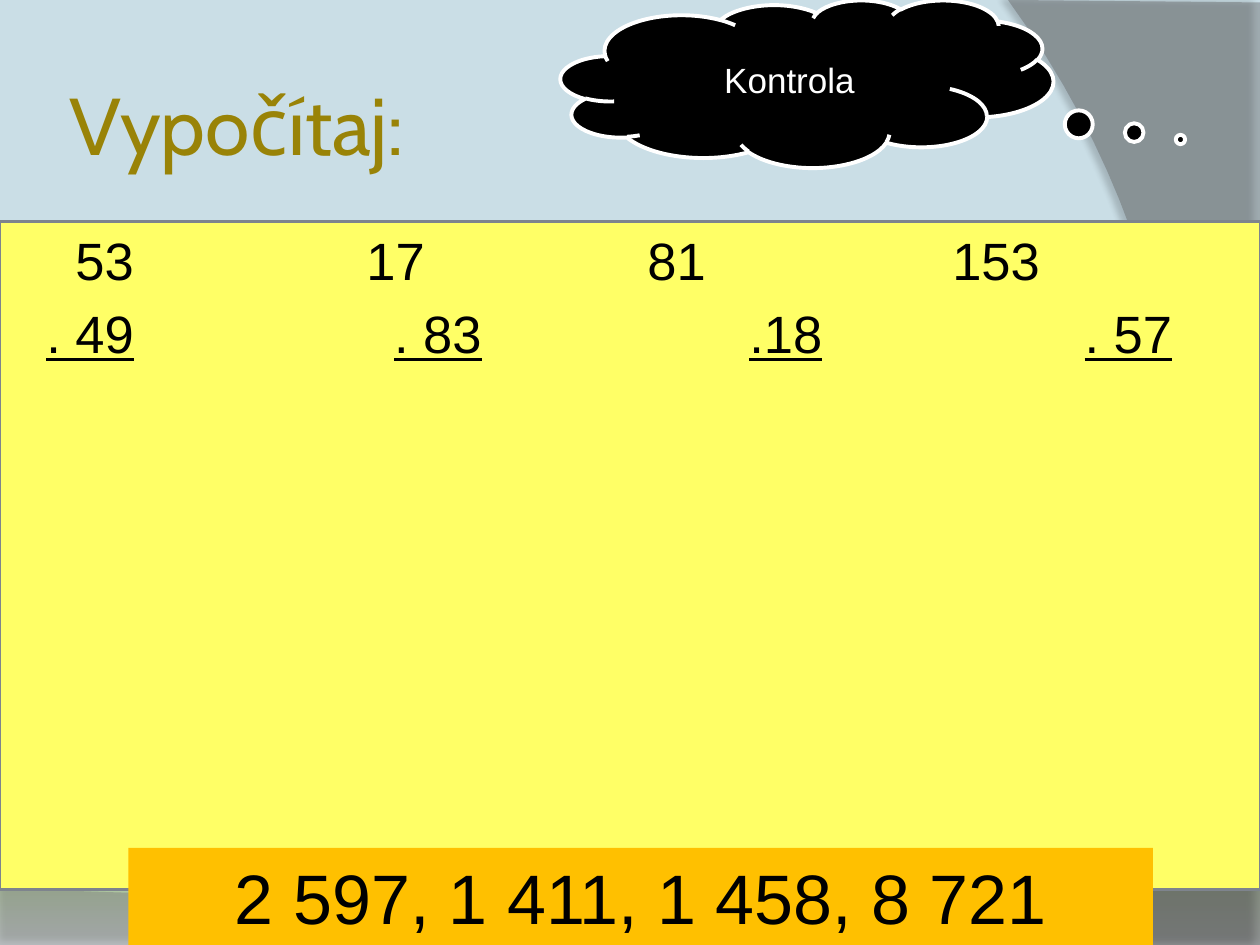
from lxml import etree
from pptx import Presentation
from pptx.dml.color import RGBColor
from pptx.enum.shapes import MSO_SHAPE as SHAPE
from pptx.enum.text import MSO_ANCHOR as ANCHOR, PP_ALIGN as ALIGN
from pptx.oxml.ns import qn
from pptx.util import Inches, Pt

TITLE = "Vypočítaj:"
HINT = "Kontrola"
RESULTS = "2 597, 1 411, 1 458, 8 721"
ROWS = [
    (False, [("53", 0.5), ("17", 2.81), ("81", 5.04), ("153", 7.46)]),
    (True, [(". 49", 0.27), (". 83", 3.03), (".18", 5.85), (". 57", 8.51)]),
]
BACKGROUND = [(50, "CADEE6"), (84, "92D050"), (84, "FFC000"), (84, "92D050"), (100, "E5EEF2")]

BLACK = RGBColor(0x00, 0x00, 0x00)
WHITE = RGBColor(0xFF, 0xFF, 0xFF)
GOLD = RGBColor(0x99, 0x83, 0x07)
YELLOW = RGBColor(0xFF, 0xFF, 0x66)
ORANGE = RGBColor(0xFF, 0xC0, 0x00)
SLATE = RGBColor(0x7E, 0x84, 0x8D)
GRAY = RGBColor(0x7F, 0x7F, 0x7F)
DARK_GRAY = RGBColor(0x5E, 0x5E, 0x5E)


def add(parent, tag, **attrs):
    return etree.SubElement(parent, qn(tag), {k: str(v) for k, v in attrs.items()})


def bezier(a, b, c, d, steps=40):
    for i in range(1, steps + 1):
        t = i / steps
        u = 1 - t
        yield tuple(u**3 * a[k] + 3 * u * u * t * b[k] + 3 * u * t * t * c[k] + t**3 * d[k]
                    for k in (0, 1))


def paint_background(s):
    fill = s.background.fill
    fill.gradient()
    fill.gradient_angle = 270
    stops = s.background._cSld.find(".//" + qn("a:gsLst"))
    for stop in list(stops):
        stops.remove(stop)
    for pos, color in BACKGROUND:
        add(add(stops, "a:gs", pos=pos * 1000), "a:srgbClr", val=color)


def add_wave(s, points, color, alpha, shadow_alpha, distance, direction):
    builder = s.shapes.build_freeform(Inches(points[0][0]), Inches(points[0][1]), scale=1.0)
    builder.add_line_segments([(Inches(x), Inches(y)) for x, y in points[1:]], close=True)
    sp = builder.convert_to_shape()
    sp.fill.solid()
    sp.fill.fore_color.rgb = color
    sp.line.fill.background()
    add(sp.fill._xPr.find(".//" + qn("a:srgbClr")), "a:alpha", val=alpha * 1000)
    sp.shadow.inherit = False
    shadow = add(sp._element.spPr.find(qn("a:effectLst")), "a:outerShdw", blurRad=Pt(4),
                 dist=Pt(distance), dir=direction * 60000, rotWithShape=0)
    add(add(shadow, "a:srgbClr", val="000000"), "a:alpha", val=shadow_alpha * 1000)


def add_box(s, kind, box, fill, line=None, width=0):
    sp = s.shapes.add_shape(kind, *map(Inches, box))
    sp.shadow.inherit = False
    sp.fill.solid()
    sp.fill.fore_color.rgb = fill
    if line is None:
        sp.line.fill.background()
    else:
        sp.line.color.rgb = line
        sp.line.width = Pt(width)
    return sp


def style(p, size, color, align=ALIGN.LEFT, font="Arial"):
    p.alignment = align
    p.font.size = Pt(size)
    p.font.name = font
    p.font.color.rgb = color


def write(sp, text, size, color, anchor=ANCHOR.MIDDLE, **kw):
    tf = sp.text_frame
    tf.word_wrap = True
    tf.vertical_anchor = anchor
    tf.text = text
    style(tf.paragraphs[0], size, color, **kw)
    return tf


def write_row(p, underline, cells):
    style(p, 30, BLACK)
    p.space_before = Pt(6)
    tabs = add(p._p.get_or_add_pPr(), "a:tabLst")
    p._p.pPr.insert_element_before(tabs, "a:defRPr")
    for text, left in cells:
        add(tabs, "a:tab", pos=Inches(left), algn="l")
        p.add_run().text = "\t"
        r = p.add_run()
        r.text = text
        r.font.underline = underline


def main():
    prs = Presentation()
    prs.slide_width, prs.slide_height = Inches(10), Inches(7.5)
    s = prs.slides.add_slide(prs.slide_layouts[6])
    paint_background(s)

    bottom = [(0, 7.05), (0, 7.51), (10, 7.51), (10, 5.2),
              *bezier((10, 5.2), (5.59, 7.29), (3.91, 7.19), (0, 7.05))]
    side = [(10, 0.02), (10, 7.5), (8.21, 7.5),
            *bezier((8.21, 7.5), (9.35, 6.19), (10.18, 3), (8, 0))]
    add_wave(s, bottom, GRAY, 45, 35, 3.5, 270)
    add_wave(s, side, DARK_GRAY, 40, 45, 4, 180)

    title = s.shapes.add_textbox(*map(Inches, (0.5, 0.35, 3.95, 1.25)))
    tf = write(title, TITLE, 46, GOLD, font="Cabin")
    tf.margin_left = tf.margin_right = Inches(0.05)

    board = add_box(s, SHAPE.RECTANGLE, (0, 1.76, 10, 5.3), YELLOW, SLATE, 1.5)
    tf = board.text_frame
    tf.word_wrap = True
    tf.vertical_anchor = ANCHOR.TOP
    for i, (underline, cells) in enumerate(ROWS):
        write_row(tf.add_paragraph() if i else tf.paragraphs[0], underline, cells)

    cloud = add_box(s, SHAPE.CLOUD_CALLOUT, (4.45, 0, 3.91, 1.33), BLACK, WHITE, 2.25)
    cloud.adjustments[0], cloud.adjustments[1] = 0.758, 0.333
    write(cloud, HINT, 20, WHITE, align=ALIGN.CENTER)

    answer = add_box(s, SHAPE.RECTANGLE, (1.02, 6.73, 8.13, 0.77), ORANGE)
    write(answer, RESULTS, 40, BLACK, anchor=ANCHOR.TOP, align=ALIGN.CENTER)

    prs.save("out.pptx")


if __name__ == "__main__":
    main()
